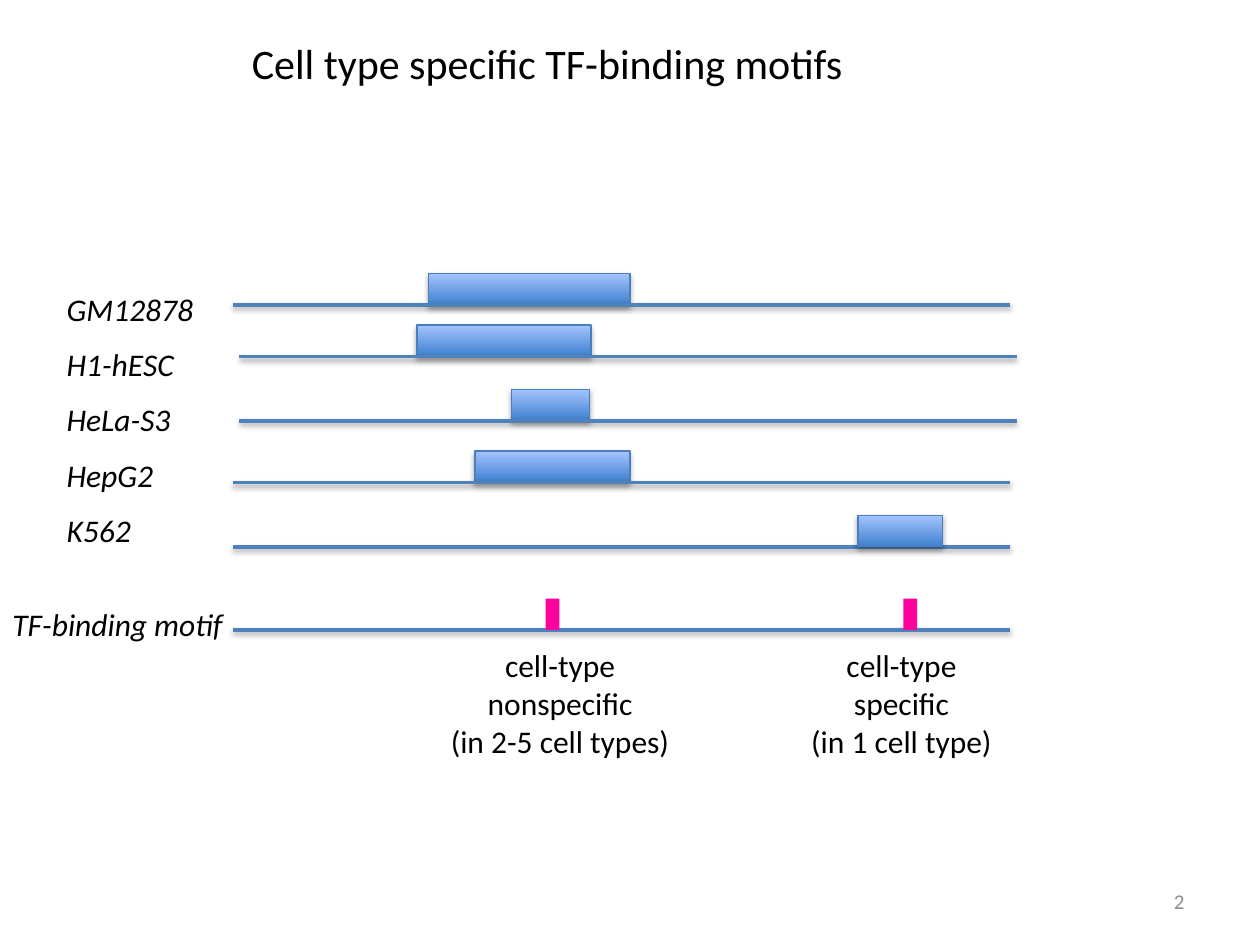
"""Build a slide of peak tracks for five cell types and their TF-binding motifs."""
from lxml.etree import SubElement
from pptx import Presentation
from pptx.dml.color import RGBColor
from pptx.enum.shapes import MSO_CONNECTOR, MSO_SHAPE
from pptx.enum.text import MSO_ANCHOR, PP_ALIGN
from pptx.oxml.ns import qn
from pptx.util import Inches, Pt

TITLE = "Cell type specific TF-binding motifs"
CELL_TYPES = ["GM12878", "H1-hESC", "HeLa-S3", "HepG2", "K562"]
TRACKS = [(1.85, 2.42), (1.9, 2.83), (1.9, 3.34), (1.85, 3.83), (1.85, 4.34), (1.85, 5)]
SHARED_PEAKS = [(3.4, 2.17, 1.6), (3.31, 2.58, 1.38), (4.06, 3.09, 0.62), (3.77, 3.58, 1.23)]
SPECIFIC_PEAK = (6.81, 4.09, 0.67)
MOTIFS = [4.33, 7.17]
NONSPECIFIC = ["cell-type nonspecific", "(in 2-5 cell types)"]
SPECIFIC = ["cell-type", "specific", "(in 1 cell type)"]
TRACK_LENGTH, BAR_HEIGHT, MOTIF_TOP, MOTIF_WIDTH = 6.17, 0.25, 4.75, 0.11


def color(value):
    return RGBColor.from_string(value)


def add_shadow(shape, opacity, distance):
    effects = SubElement(shape._element.spPr, qn("a:effectLst"))
    shadow = SubElement(effects, qn("a:outerShdw"), blurRad=str(Pt(3.1)),
                        dist=str(Pt(distance)), dir="5400000", rotWithShape="0")
    black = SubElement(shadow, qn("a:srgbClr"), val="000000")
    SubElement(black, qn("a:alpha"), val=str(opacity * 1000))


def add_bar(page, left, top, width):
    return page.shapes.add_shape(MSO_SHAPE.RECTANGLE, Inches(left), Inches(top),
                                 Inches(width), Inches(BAR_HEIGHT))


def add_peak(page, left, top, width):
    peak = add_bar(page, left, top, width)
    peak.fill.gradient()
    peak.fill.gradient_angle = 90
    for stop, position, shade in zip(peak.fill.gradient_stops, (0, 1), ("3F80CE", "A4C4FF")):
        stop.position = position
        stop.color.rgb = color(shade)
    peak.line.color.rgb = color("4B7EBC")
    peak.line.width = Pt(0.75)
    add_shadow(peak, 35, 1.8)


def add_track(page, left, top):
    track = page.shapes.add_connector(MSO_CONNECTOR.STRAIGHT, Inches(left), Inches(top),
                                      Inches(left + TRACK_LENGTH), Inches(top))
    track.line.color.rgb = color("4F81BD")
    track.line.width = Pt(2)
    add_shadow(track, 38, 1.6)


def add_motif(page, left):
    motif = add_bar(page, left, MOTIF_TOP, MOTIF_WIDTH)
    motif.fill.solid()
    motif.fill.fore_color.rgb = color("FF029D")
    motif.line.fill.background()
    motif.shadow.inherit = False


def add_text(page, place, lines, size=18, italic=False, align=PP_ALIGN.LEFT,
             shade="000000", wrap=False, gap=0, anchor=MSO_ANCHOR.TOP):
    box = page.shapes.add_textbox(*map(Inches, place))
    frame = box.text_frame
    frame.word_wrap = wrap
    frame.vertical_anchor = anchor
    frame.text = "\n".join(lines)
    for para in frame.paragraphs:
        para.alignment = align
        para.space_after = Pt(gap)
        for span in para.runs:
            span.font.name = "Calibri"
            span.font.size = Pt(size)
            span.font.italic = italic
            span.font.color.rgb = color(shade)


def main():
    deck = Presentation()
    deck.slide_width, deck.slide_height = Inches(10), Inches(7.5)
    page = deck.slides.add_slide(deck.slide_layouts[6])
    for peak in SHARED_PEAKS:
        add_peak(page, *peak)
    for track in TRACKS:
        add_track(page, *track)
    add_peak(page, *SPECIFIC_PEAK)
    for left in MOTIFS:
        add_motif(page, left)
    add_text(page, (1.9, 0.25, 4.94, 0.5), [TITLE], size=24)
    add_text(page, (0.43, 2.25, 1.28, 2.18), CELL_TYPES, italic=True, gap=10)
    add_text(page, (0, 4.75, 1.95, 0.4), ["TF-binding motif"], italic=True)
    add_text(page, (3.37, 5.08, 2.15, 1.01), NONSPECIFIC, align=PP_ALIGN.CENTER, wrap=True)
    add_text(page, (6.33, 5.08, 1.65, 1.01), SPECIFIC, align=PP_ALIGN.CENTER)
    add_text(page, (7.17, 6.95, 2.33, 0.4), ["2"], size=12, align=PP_ALIGN.RIGHT,
             shade="8C8C8C", wrap=True, anchor=MSO_ANCHOR.MIDDLE)
    deck.save("out.pptx")


if __name__ == "__main__":
    main()
